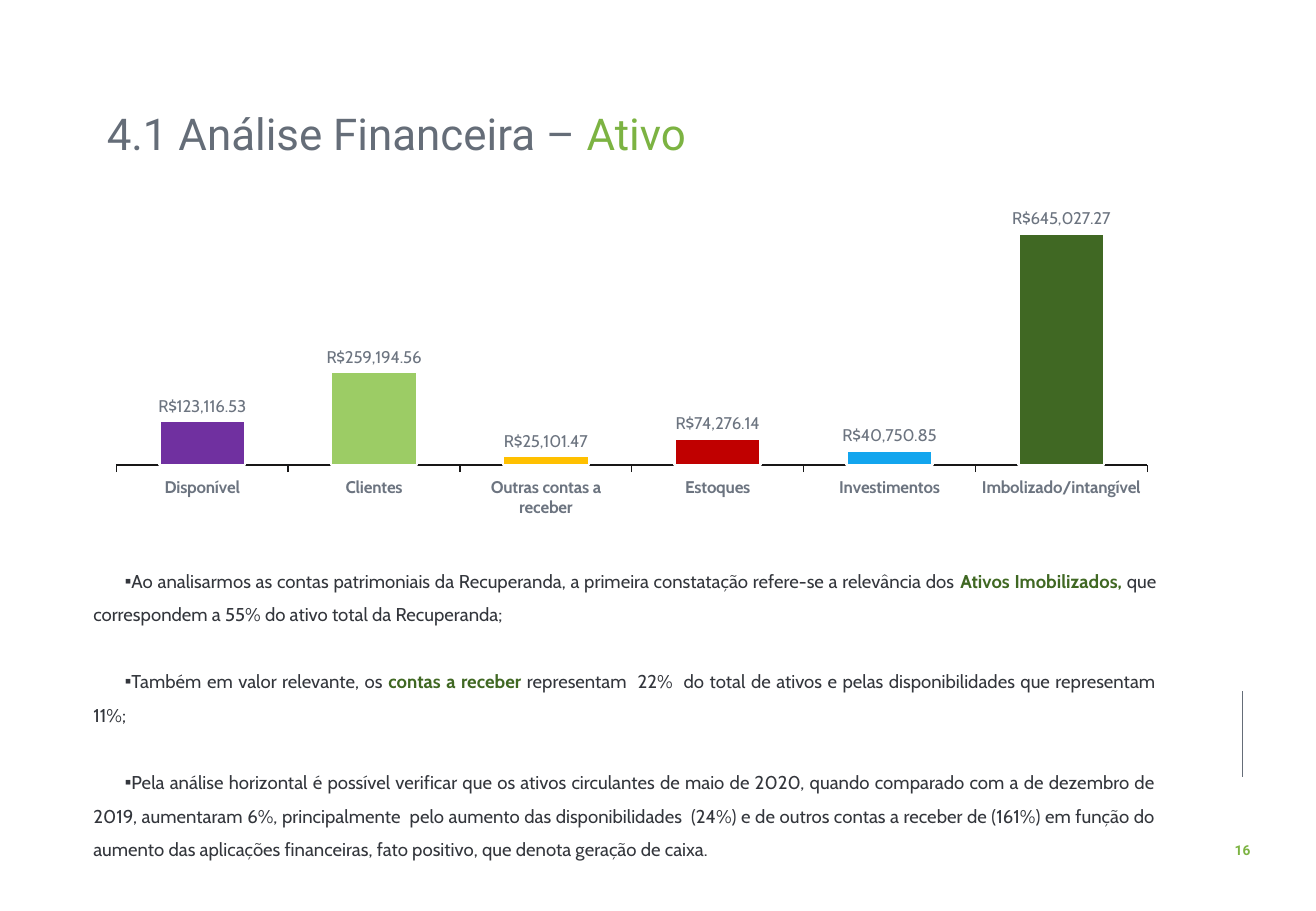
from lxml.etree import SubElement
from pptx import Presentation
from pptx.chart.data import CategoryChartData
from pptx.dml.color import RGBColor
from pptx.enum.chart import XL_CHART_TYPE as ChartType, XL_LABEL_POSITION as LabelPos, XL_TICK_MARK as Tick
from pptx.enum.shapes import MSO_CONNECTOR as Connector
from pptx.enum.text import MSO_ANCHOR as Anchor, PP_ALIGN as Align
from pptx.oxml import parse_xml
from pptx.oxml.ns import nsdecls, qn
from pptx.util import Pt

COLORS = {
    "gray": "656D78", "label": "6C7480", "text": "33363C", "axis": "181717",
    "white": "FFFFFF", "accent": "7CB342", "dark": "406823", "purple": "7030A0",
    "light": "9CCC65", "yellow": "FFC000", "red": "C00000", "blue": "12A5EE",
}


def rgb(name):
    return RGBColor.from_string(COLORS[name])


def style(font, face, size, color, bold=False):
    font.name, font.size, font.bold = face, Pt(size), bold
    font.color.rgb = rgb(color)


deck = Presentation()
deck.slide_width, deck.slide_height = Pt(780), Pt(540)
slide = deck.slides.add_slide(deck.slide_layouts[6])
shapes = slide.shapes

rule = shapes.add_connector(Connector.STRAIGHT, Pt(736.6), Pt(409.7), Pt(736.6), Pt(460.8))
rule.line.color.rgb = rgb("gray")
rule.line.width = Pt(0.5)
SubElement(rule._element.spPr, qn("a:effectLst"))

page = shapes.add_textbox(Pt(724.3), Pt(495.4), Pt(24.5), Pt(17.3)).text_frame
page.word_wrap = False
number = page.paragraphs[0]
number.text = "16"
number.alignment = Align.CENTER
style(number.font, "Roboto", 8.1, "accent", True)

heading = shapes.add_textbox(Pt(56.2), Pt(61.9), Pt(589), Pt(38.2)).text_frame
heading.word_wrap = True
heading.vertical_anchor = Anchor.MIDDLE
title = heading.paragraphs[0]
title.line_spacing = 0.9
for words, color in [("4.1 Análise Financeira – ", "gray"), ("Ativo", "accent")]:
    run = title.add_run()
    run.text = words
    style(run.font, "Roboto", 26, color)

findings = [
    [("Ao analisarmos as contas patrimoniais da Recuperanda, a primeira constatação "
      "refere-se a relevância dos ", False),
     ("Ativos Imobilizados,", True),
     (" que correspondem a 55% do ativo total da Recuperanda;", False)],
    [("Também em valor relevante, os ", False),
     ("contas a receber ", True),
     ("representam  22%  do total de ativos e pelas disponibilidades que representam 11%;", False)],
    [("Pela análise horizontal é possível verificar que os ativos circulantes de maio de 2020, "
      "quando comparado com a de dezembro de 2019, aumentaram 6%, principalmente  pelo aumento "
      "das disponibilidades  (24%) e de outros contas a receber de (161%) em função do aumento "
      "das aplicações financeiras, fato positivo, que denota geração de caixa.", False)],
]
analysis = shapes.add_textbox(Pt(48.2), Pt(327.6), Pt(644.4), Pt(167)).text_frame
analysis.word_wrap = True
for i, finding in enumerate(findings):
    item = analysis.add_paragraph() if i else analysis.paragraphs[0]
    item.alignment = Align.JUSTIFY
    item.line_spacing = 1.5
    if i:
        item.space_before = Pt(20)
    props = item._p.get_or_add_pPr()
    props.set("marL", "0")
    props.set("indent", str(Pt(18.7)))
    SubElement(props, qn("a:buFont"), typeface="Arial")
    SubElement(props, qn("a:buChar"), char="▪")
    for words, strong in finding:
        run = item.add_run()
        run.text = words
        style(run.font, "Cabin", 11, "dark" if strong else "text", strong)

assets = [
    ("Disponível", 123116.53, "purple"),
    ("Clientes", 259194.56, "light"),
    ("Outras contas a receber", 25101.47, "yellow"),
    ("Estoques", 74276.14, "red"),
    ("Investimentos", 40750.85, "blue"),
    ("Imbolizado/intangível", 645027.27, "dark"),
]
data = CategoryChartData()
data.categories = [name for name, value, color in assets]
data.add_series("Ativo", [value for name, value, color in assets])
chart = shapes.add_chart(ChartType.COLUMN_CLUSTERED, Pt(56.2), Pt(121), Pt(636.5), Pt(188.6), data).chart
chart.has_legend = chart.has_title = False
style(chart.font, "Cabin", 10, "label")

amounts = chart.value_axis
amounts.visible = amounts.has_major_gridlines = False
amounts.minimum_scale, amounts.maximum_scale = 0, 700000
accounts = chart.category_axis
accounts.major_tick_mark = Tick.OUTSIDE
accounts.format.line.color.rgb = rgb("axis")
accounts.format.line.width = Pt(0.75)
style(accounts.tick_labels.font, "Cabin", 10, "label", True)

columns = chart.plots[0]
columns.gap_width = 100
columns.vary_by_categories = False
columns.has_data_labels = True
labels = columns.data_labels
labels.show_value = True
labels.position = LabelPos.OUTSIDE_END
labels.number_format = '"R$"#,##0.00'
labels.number_format_is_linked = False
style(labels.font, "Cabin", 10, "label")
for i, (name, value, color) in enumerate(assets):
    column = columns.series[0].points[i].format
    column.fill.solid()
    column.fill.fore_color.rgb = rgb(color)
    column.line.color.rgb = rgb("white")
    column.line.width = Pt(1.5)

plot_area = chart._chartSpace.chart.plotArea
for old in plot_area.findall(qn("c:layout")):
    plot_area.remove(old)
plot_area.insert(0, parse_xml(
    f'<c:layout {nsdecls("c")}><c:manualLayout><c:layoutTarget val="inner"/>'
    '<c:xMode val="edge"/><c:yMode val="edge"/><c:x val="0.02"/><c:y val="0.03"/>'
    '<c:w val="0.96"/><c:h val="0.79"/></c:manualLayout></c:layout>'))

deck.save("out.pptx")
